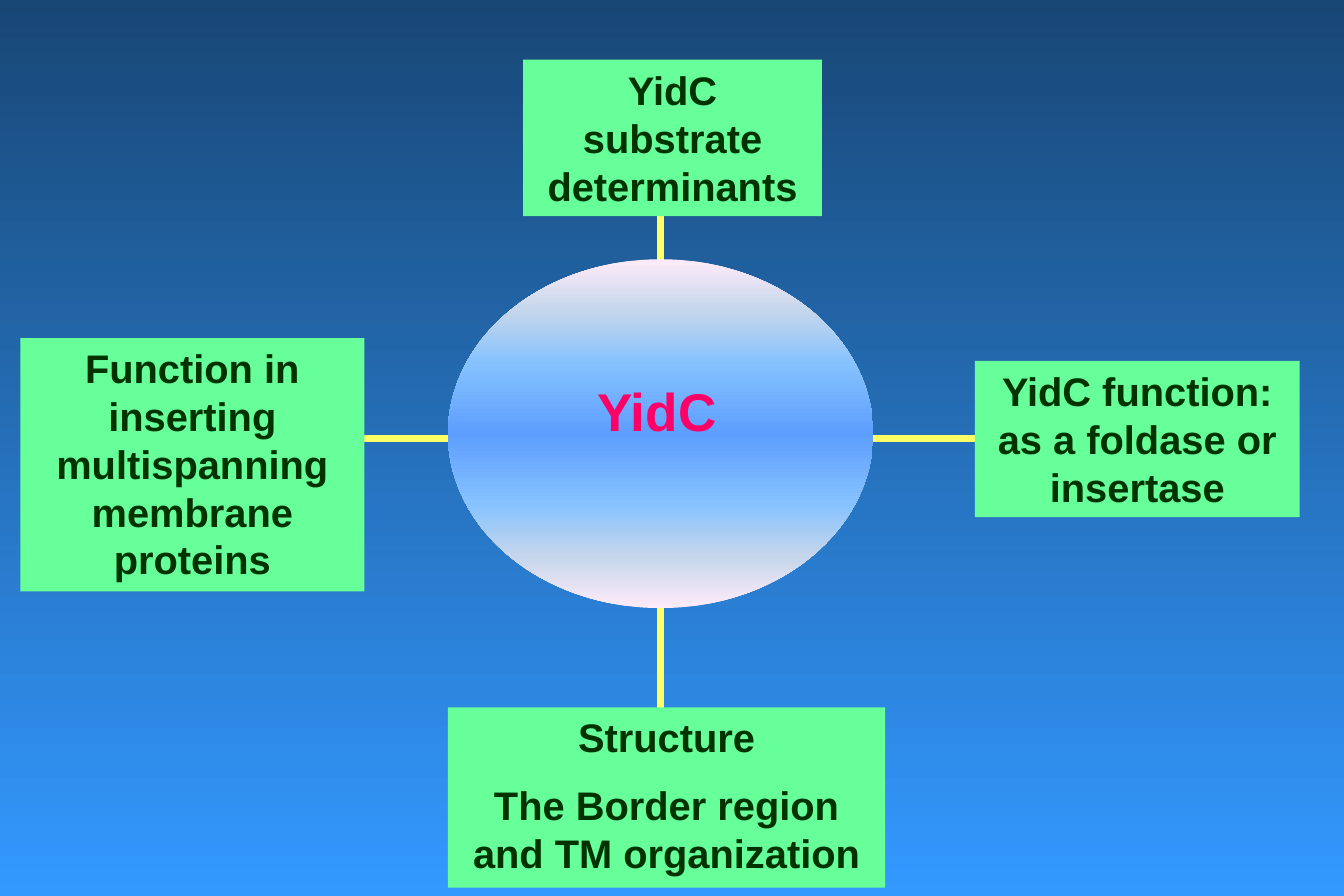
from dataclasses import dataclass

from lxml import etree
from pptx import Presentation
from pptx.dml.color import RGBColor
from pptx.enum.shapes import MSO_CONNECTOR, MSO_SHAPE
from pptx.enum.text import MSO_ANCHOR, MSO_AUTO_SIZE, PP_ALIGN
from pptx.oxml.ns import qn
from pptx.util import Inches, Pt

STRAIGHT = MSO_CONNECTOR.STRAIGHT
RECTANGLE = MSO_SHAPE.RECTANGLE
OVAL = MSO_SHAPE.OVAL
TOP = MSO_ANCHOR.TOP
CENTER = PP_ALIGN.CENTER
GROW = MSO_AUTO_SIZE.SHAPE_TO_FIT_TEXT


@dataclass(frozen=True)
class Theme:
    font: str = "Arial"
    topic_size: int = 24
    hub_size: int = 32
    line_width: float = 4.5
    topic_fill: str = "66FF99"
    topic_text: str = "003300"
    hub_text: str = "FF0066"
    line: str = "FFFF66"
    background: tuple = ((0, "184776"), (100, "3399FF"))
    hub_fill: tuple = (
        (0, "FFEBFA"), (15, "C4D6EB"), (30, "85C2FF"), (50, "5E9EFF"),
        (70, "85C2FF"), (85, "C4D6EB"), (100, "FFEBFA"),
    )


THEME = Theme()

TOPICS = (
    ((4.38, 0.5, 2.5, 1.31), ("YidC substrate determinants",)),
    ((8.16, 3.02, 2.72, 1.31), ("YidC function: as a foldase or insertase",)),
    ((3.75, 5.92, 3.66, 1.51),
     ("Structure", "The Border region and TM organization")),
    ((0.17, 2.83, 2.88, 2.12),
     ("Function in inserting multispanning membrane proteins",)),
)
SPOKES = (
    (5.53, 1.33, 5.53, 6.25),
    (2.47, 3.67, 8.56, 3.67),
)
HUB = (3.75, 2.17, 3.56, 2.92)
HUB_LABEL = (3.81, 3.12, 3.38, 0.63)


def inches(lengths):
    return [Inches(length) for length in lengths]


def paint_gradient(fill, element, stops):
    fill.gradient()
    fill.gradient_angle = 270
    stop_list = next(element.iter(qn("a:gsLst")))
    for stop in list(stop_list):
        stop_list.remove(stop)
    for percent, color in stops:
        stop = etree.SubElement(stop_list, qn("a:gs"), pos=str(percent * 1000))
        etree.SubElement(stop, qn("a:srgbClr"), val=color)


def write_text(box, lines, size, color):
    frame = box.text_frame
    frame.word_wrap = True
    frame.auto_size = GROW
    frame.vertical_anchor = TOP
    frame.text = "\n".join(lines)
    for index, para in enumerate(frame.paragraphs):
        para.alignment = CENTER
        para.space_before = Pt(size / 2 if index else 0)
        for span in para.runs:
            span.font.name = THEME.font
            span.font.size = Pt(size)
            span.font.bold = True
            span.font.color.rgb = RGBColor.from_string(color)


def add_spoke(page, ends):
    spoke = page.shapes.add_connector(STRAIGHT, *inches(ends))
    spoke.line.color.rgb = RGBColor.from_string(THEME.line)
    spoke.line.width = Pt(THEME.line_width)
    etree.SubElement(spoke.element.spPr, qn("a:effectLst"))


def add_plain_shape(page, kind, place):
    shape = page.shapes.add_shape(kind, *inches(place))
    shape.shadow.inherit = False
    shape.line.fill.background()
    return shape


def add_hub(page):
    hub = add_plain_shape(page, OVAL, HUB)
    paint_gradient(hub.fill, hub.element, THEME.hub_fill)
    label = page.shapes.add_textbox(*inches(HUB_LABEL))
    write_text(label, ("YidC",), THEME.hub_size, THEME.hub_text)


def add_topic(page, place, lines):
    box = add_plain_shape(page, RECTANGLE, place)
    box.fill.solid()
    box.fill.fore_color.rgb = RGBColor.from_string(THEME.topic_fill)
    write_text(box, lines, THEME.topic_size, THEME.topic_text)


def main():
    deck = Presentation()
    deck.slide_width = Inches(11.25)
    deck.slide_height = Inches(7.5)
    page = deck.slides.add_slide(deck.slide_layouts[6])
    paint_gradient(page.background.fill, page.element, THEME.background)
    for ends in SPOKES:
        add_spoke(page, ends)
    add_hub(page)
    for place, lines in TOPICS:
        add_topic(page, place, lines)
    deck.save("out.pptx")


if __name__ == "__main__":
    main()
